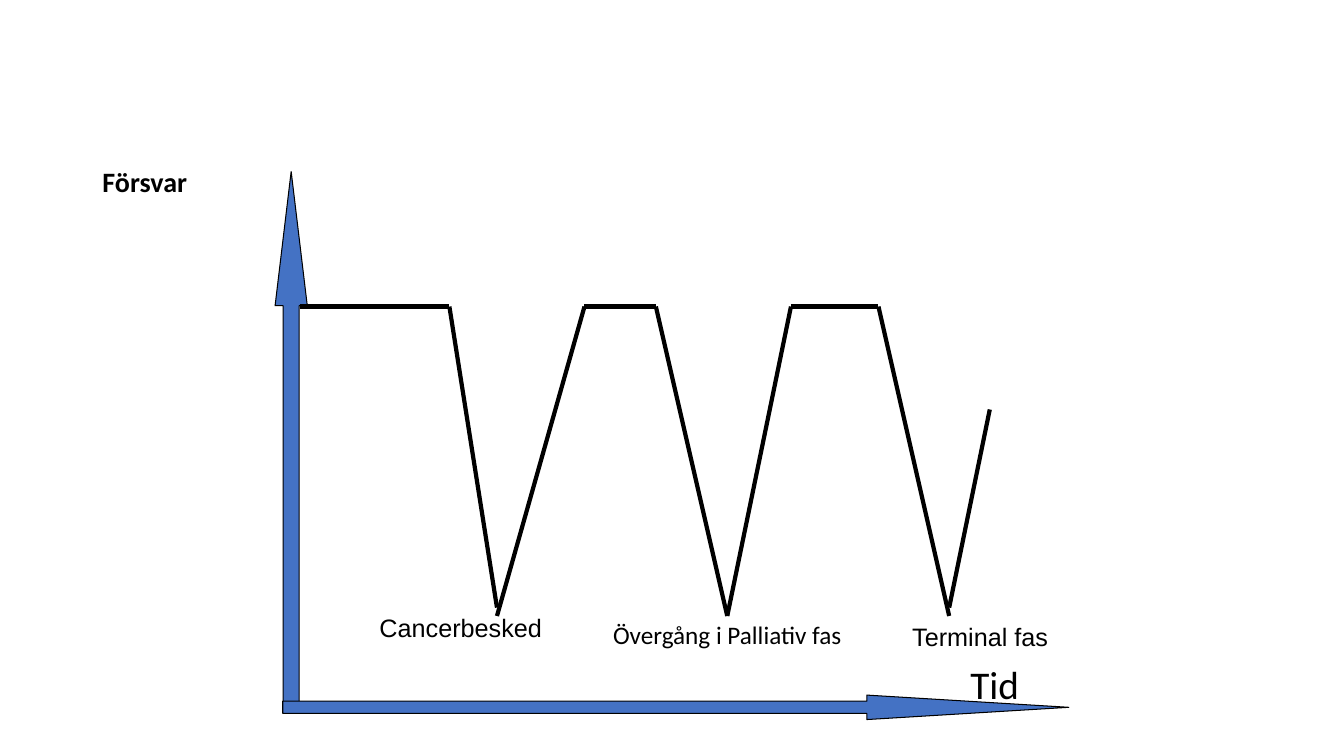
from pptx import Presentation
from pptx.dml.color import RGBColor
from pptx.enum.shapes import MSO_CONNECTOR, MSO_SHAPE
from pptx.enum.text import MSO_ANCHOR, PP_ALIGN
from pptx.oxml.ns import qn
from pptx.util import Pt
from lxml import etree


def paint(color, value):
    color.rgb = RGBColor.from_string(value)


def write(shape, text, size, face, align=PP_ALIGN.LEFT):
    frame = shape.text_frame
    frame.word_wrap = True
    frame.text = text
    para = frame.paragraphs[0]
    para.alignment = align
    para.font.size = Pt(size)
    para.font.name = face
    paint(para.font.color, "000000")
    return para


deck = Presentation()
deck.slide_width, deck.slide_height = Pt(960), Pt(540)
slide = deck.slides.add_slide(deck.slide_layouts[5])
shapes = slide.shapes

# Title, which names the vertical axis
title = shapes.title
title.left, title.top, title.width, title.height = Pt(66), Pt(94.5), Pt(181.5), Pt(73.5)
title.text_frame.vertical_anchor = MSO_ANCHOR.MIDDLE
para = write(title, "Försvar", 20, "Calibri")
para.font.bold = True
para.line_spacing = 0.9

# Axes
axes = [
    (MSO_SHAPE.UP_ARROW, 196.5, 122.5, 23, 380, 4.17),
    (MSO_SHAPE.RIGHT_ARROW, 202, 496.5, 561.5, 17.5, 8.25),
]
for kind, left, top, width, height, head in axes:
    axis = shapes.add_shape(kind, Pt(left), Pt(top), Pt(width), Pt(height))
    axis.shadow.inherit = False
    axis.adjustments[0] = 0.5
    axis.adjustments[1] = head
    axis.fill.solid()
    paint(axis.fill.fore_color, "4472C4")
    paint(axis.line.color, "000000")
    axis.line.width = Pt(0.75)

# Defence curve: level, then a drop at each crisis
HIGH, LOW, NEAR = 219, 440, 434
curve = [
    (214, HIGH, 321, HIGH),
    (321, HIGH, 355, NEAR),
    (355, LOW, 417.5, HIGH),
    (417.5, HIGH, 468.5, HIGH),
    (468.5, HIGH, 519.5, LOW),
    (519.5, LOW, 565, HIGH),
    (565, HIGH, 627.5, HIGH),
    (627.5, HIGH, 678, LOW),
    (678, NEAR, 707, 292.5),
]
for ends in curve:
    line = shapes.add_connector(MSO_CONNECTOR.STRAIGHT, *map(Pt, ends))
    paint(line.line.color, "000000")
    line.line.width = Pt(3)
    etree.SubElement(line._element.spPr, qn("a:effectLst"))

# Crisis names and the time axis label
labels = [
    ("Cancerbesked", 264, 434, 189, 29, 18, "Arial", PP_ALIGN.LEFT),
    ("Övergång i Palliativ fas", 419.5, 439, 200, 29, 18, "Calibri", PP_ALIGN.CENTER),
    ("Terminal fas", 644.5, 440, 142, 29, 18, "Arial", PP_ALIGN.LEFT),
    ("Tid", 670.5, 468, 80, 41, 28, "Calibri", PP_ALIGN.CENTER),
]
for text, left, top, width, height, size, face, align in labels:
    label = shapes.add_textbox(Pt(left), Pt(top), Pt(width), Pt(height))
    write(label, text, size, face, align)

deck.save("out.pptx")
